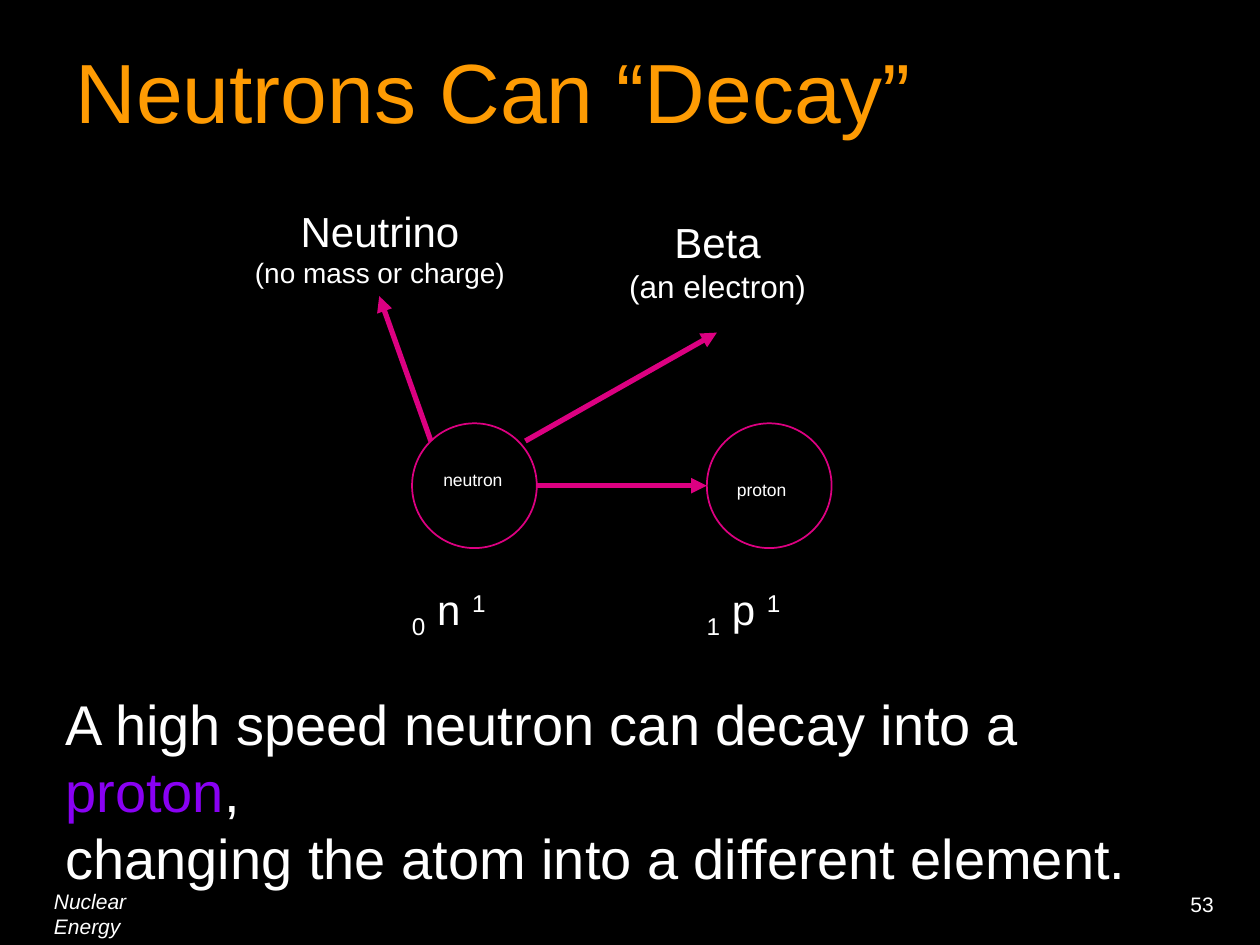
from lxml.etree import SubElement
from pptx import Presentation
from pptx.dml.color import RGBColor
from pptx.enum.shapes import MSO_CONNECTOR, MSO_SHAPE
from pptx.enum.text import MSO_ANCHOR, PP_ALIGN
from pptx.oxml.ns import qn
from pptx.util import Inches, Pt

THEME = {
    "font": "Arial",
    "back": "000000", "text": "FFFFFF", "title": "FE9B03",
    "line": "DC0081", "accent": "8901F3",
    "title_size": 48, "body_size": 32, "head_size": 24,
    "beta_size": 18, "note_size": 16, "foot_size": 12, "tag_size": 10,
}

# Content: a run is (text, size key, extra format)
TITLE = [[("Neutrons Can “Decay”", "title_size", {"color": "title"})]]
BODY = [
    [("A high speed neutron can decay into a ", "body_size", {}),
     ("proton", "body_size", {"color": "accent"}),
     (",", "body_size", {})],
    [("changing the atom into a different element.", "body_size", {})],
]
FOOTER = [[("Nuclear Energy", "foot_size", {"italic": True})]]
NUMBER = [[("53", "foot_size", {})]]

# name, symbol, charge, mass, circle left, name box left and top
PARTICLES = [
    ("neutron", "n", "0", "1", 3.27, 3.42, 3.67),
    ("proton", "p", "1", "1", 5.61, 5.75, 3.75),
]
# name, note, note size, box
PRODUCTS = [
    ("Neutrino", "(no mass or charge)", "note_size", (1.92, 1.58, 2.19, 0.77)),
    ("Beta", "(an electron)", "beta_size", (4.73, 1.67, 1.93, 0.8)),
]
CIRCLE_TOP, DIAMETER = 3.36, 0.99
CIRCLE_MID = CIRCLE_TOP + DIAMETER / 2
ARROWS = [
    ((3.42, 3.5), (3.01, 2.35)),
    ((4.17, 3.5), (5.69, 2.64)),
    ((PARTICLES[0][4] + DIAMETER, CIRCLE_MID), (PARTICLES[1][4], CIRCLE_MID)),
]


def rgb(key):
    return RGBColor.from_string(THEME[key])


def place(shape, box):
    for name, value in zip(("left", "top", "width", "height"), box):
        setattr(shape, name, Inches(value))


def write(tf, paragraphs, align=PP_ALIGN.LEFT, anchor=MSO_ANCHOR.TOP, right=0.1):
    frame = {"word_wrap": True, "vertical_anchor": anchor,
             "margin_left": Inches(0.1), "margin_right": Inches(right),
             "margin_top": Inches(0.05), "margin_bottom": Inches(0.05)}
    for name, value in frame.items():
        setattr(tf, name, value)
    for i, runs in enumerate(paragraphs):
        p = tf.add_paragraph() if i else tf.paragraphs[0]
        p.alignment = align
        for text, size, extra in runs:
            r = p.add_run()
            r.text = text
            fmt = {"name": THEME["font"], "size": Pt(THEME[size]),
                   "italic": extra.get("italic", False)}
            for name, value in fmt.items():
                setattr(r.font, name, value)
            r.font.color.rgb = rgb(extra.get("color", "text"))
            if "base" in extra:
                r.font._element.set("baseline", str(extra["base"] * 1000))


def add_text(s, box, paragraphs, **options):
    tb = s.shapes.add_textbox(*map(Inches, box))
    write(tb.text_frame, paragraphs, **options)


def add_circle(s, left):
    sp = s.shapes.add_shape(MSO_SHAPE.OVAL, *map(
        Inches, (left, CIRCLE_TOP, DIAMETER, DIAMETER)))
    sp.shadow.inherit = False
    sp.fill.background()
    sp.line.color.rgb = rgb("line")
    sp.line.width = Pt(1)


def add_arrow(s, start, end):
    c = s.shapes.add_connector(MSO_CONNECTOR.STRAIGHT, *map(Inches, start + end))
    c.line.color.rgb = rgb("line")
    c.line.width = Pt(3)
    SubElement(c.line._get_or_add_ln(), qn("a:tailEnd"), type="triangle")
    SubElement(c._element.spPr, qn("a:effectLst"))


prs = Presentation()
prs.slide_width, prs.slide_height = Inches(10), Inches(7.5)
s = prs.slides.add_slide(prs.slide_layouts[5])
s.background.fill.solid()
s.background.fill.fore_color.rgb = rgb("back")

# Title and footer
place(s.shapes.title, (0.5, 0.33, 7.33, 0.76))
write(s.shapes.title.text_frame, TITLE, anchor=MSO_ANCHOR.MIDDLE)
add_text(s, (9.35, 7.03, 0.4, 0.3), NUMBER, right=0)
add_text(s, (0.33, 7, 1.35, 0.3), FOOTER, right=0.3)

# Particles with nuclear symbols
for name, symbol, charge, mass, left, tag_left, tag_top in PARTICLES:
    add_circle(s, left)
    add_text(s, (left - 0.1, 4.58, 0.82, 0.5), [[
        (charge, "head_size", {"base": -25}),
        (f" {symbol} ", "head_size", {}),
        (mass, "head_size", {"base": 30})]])
    add_text(s, (tag_left, tag_top, 0.83, 0.27), [[(name, "tag_size", {})]])

# Decay products and arrows
for name, note, size, box in PRODUCTS:
    add_text(s, box, [[(name, "head_size", {})], [(note, size, {})]],
             align=PP_ALIGN.CENTER)
for start, end in ARROWS:
    add_arrow(s, start, end)

# Conclusion
add_text(s, (0.42, 5.42, 9.28, 1.17), BODY, right=0.4)

prs.save("out.pptx")
